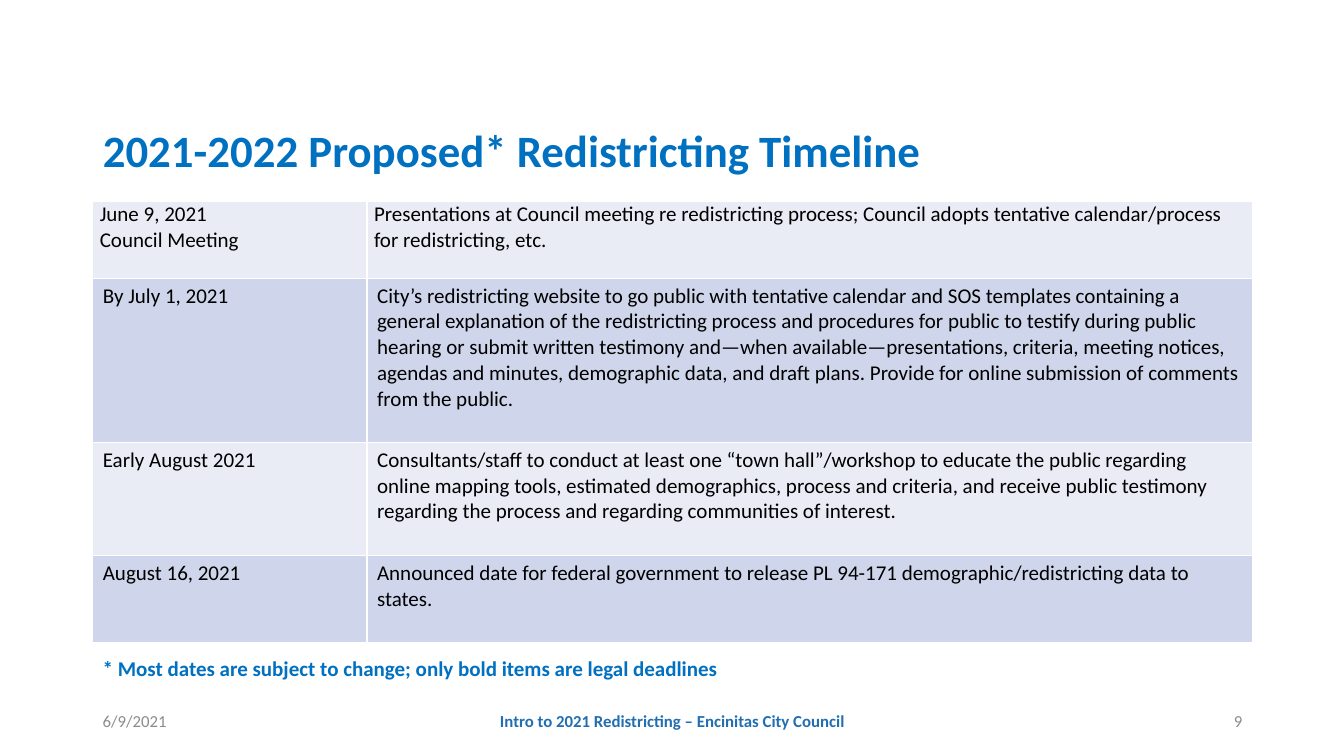
from lxml import etree
from pptx import Presentation
from pptx.dml.color import RGBColor
from pptx.enum.text import MSO_ANCHOR, PP_ALIGN
from pptx.oxml.ns import qn
from pptx.util import Inches, Pt

LEFT, CENTER, RIGHT = PP_ALIGN.LEFT, PP_ALIGN.CENTER, PP_ALIGN.RIGHT
TOP, MIDDLE = MSO_ANCHOR.TOP, MSO_ANCHOR.MIDDLE

BLUE = RGBColor(0x00, 0x70, 0xC0)
FOOTER_BLUE = RGBColor(0x21, 0x6E, 0xB0)
GRAY = RGBColor(0x8C, 0x8C, 0x8C)
BLACK = RGBColor(0x00, 0x00, 0x00)
BANDS = (RGBColor(0xE9, 0xEB, 0xF5), RGBColor(0xCF, 0xD5, 0xEA))
BORDER = "FFFFFF"

# Page grid, in inches
WIDTH, HEIGHT = 13.33, 7.5
MARGIN, CONTENT = 0.92, 11.5
DATE_COLUMN = 2.72
FOOTER_TOP, FOOTER_HEIGHT = 6.95, 0.4
SIDE_WIDTH, MIDDLE_WIDTH = 3, 4.5

TITLE_FORMAT = {"size": Pt(32), "bold": True, "color": BLUE}
CELL_FORMAT = {"size": Pt(15), "bold": False, "color": BLACK}
NOTE_FORMAT = {"size": Pt(15), "bold": True, "color": BLUE}
SIDE_FORMAT = {"size": Pt(12), "bold": False, "color": GRAY}
MIDDLE_FORMAT = {"size": Pt(12), "bold": True, "color": FOOTER_BLUE}

# Row height, date lines, description
TIMELINE = [
    (0.76, "June 9, 2021\nCouncil Meeting",
     "Presentations at Council meeting re redistricting process; Council adopts "
     "tentative calendar/process for redistricting, etc."),
    (1.63, "By July 1, 2021",
     "City’s redistricting website to go public with tentative calendar and SOS "
     "templates containing a general explanation of the redistricting process and "
     "procedures for public to testify during public hearing or submit written "
     "testimony and—when available—presentations, criteria, meeting notices, "
     "agendas and minutes, demographic data, and draft plans. Provide for online "
     "submission of comments from the public."),
    (1.12, "Early August 2021",
     "Consultants/staff to conduct at least one “town hall”/workshop to educate "
     "the public regarding online mapping tools, estimated demographics, process "
     "and criteria, and receive public testimony regarding the process and "
     "regarding communities of interest."),
    (0.87, "August 16, 2021",
     "Announced date for federal government to release PL 94-171 "
     "demographic/redistricting data to states."),
]


def write(text_frame, text, text_format, alignment=LEFT):
    text_frame.text = text
    for paragraph in text_frame.paragraphs:
        paragraph.alignment = alignment
        paragraph.font.name = "Calibri"
        for name, value in text_format.items():
            if name == "color":
                paragraph.font.color.rgb = value
            else:
                setattr(paragraph.font, name, value)


def add_title(slide, text):
    title = slide.shapes.title
    place = {"left": MARGIN, "top": 1.18, "width": CONTENT, "height": 0.67}
    for name, value in place.items():
        setattr(title, name, Inches(value))
    write(title.text_frame, text, TITLE_FORMAT)
    title.text_frame.vertical_anchor = MIDDLE
    title.text_frame.paragraphs[0].line_spacing = 0.9


def add_text(slide, box, text, text_format, alignment=LEFT, anchor=MIDDLE):
    shape = slide.shapes.add_textbox(*[Inches(value) for value in box])
    shape.text_frame.word_wrap = True
    shape.text_frame.vertical_anchor = anchor
    write(shape.text_frame, text, text_format, alignment)


def add_borders(cell):
    properties = cell._tc.get_or_add_tcPr()
    for index, side in enumerate(("a:lnL", "a:lnR", "a:lnT", "a:lnB")):
        line = etree.Element(qn(side), w=str(Pt(1)))
        fill = etree.SubElement(line, qn("a:solidFill"))
        etree.SubElement(fill, qn("a:srgbClr"), val=BORDER)
        properties.insert(index, line)


def add_timeline(slide, rows):
    total = sum(height for height, *_ in rows)
    frame = slide.shapes.add_table(len(rows), 2, Inches(MARGIN), Inches(2),
                                   Inches(CONTENT), Inches(total))
    table = frame.table
    table.first_row = table.horz_banding = False
    for column, width in zip(table.columns, (DATE_COLUMN, CONTENT - DATE_COLUMN)):
        column.width = Inches(width)
    for row_index, (height, *texts) in enumerate(rows):
        table.rows[row_index].height = Inches(height)
        for column_index, text in enumerate(texts):
            cell = table.cell(row_index, column_index)
            write(cell.text_frame, text, CELL_FORMAT)
            add_borders(cell)
            cell.fill.solid()
            cell.fill.fore_color.rgb = BANDS[row_index % 2]
            # The opening row has tighter margins
            if row_index == 0:
                cell.margin_left = cell.margin_right = Inches(0.07)
                cell.margin_top = cell.margin_bottom = 0


def add_footer(slide):
    parts = [
        (MARGIN, SIDE_WIDTH, "6/9/2021", SIDE_FORMAT, LEFT),
        (MARGIN + (CONTENT - MIDDLE_WIDTH) / 2, MIDDLE_WIDTH,
         "Intro to 2021 Redistricting – Encinitas City Council",
         MIDDLE_FORMAT, CENTER),
        (MARGIN + CONTENT - SIDE_WIDTH, SIDE_WIDTH, "9", SIDE_FORMAT, RIGHT),
    ]
    for left, width, text, text_format, alignment in parts:
        add_text(slide, (left, FOOTER_TOP, width, FOOTER_HEIGHT), text,
                 text_format, alignment)


def main():
    presentation = Presentation()
    presentation.slide_width = Inches(WIDTH)
    presentation.slide_height = Inches(HEIGHT)
    slide = presentation.slides.add_slide(presentation.slide_layouts[5])

    add_title(slide, "2021-2022 Proposed* Redistricting Timeline")
    add_timeline(slide, TIMELINE)
    add_text(slide, (MARGIN, 6.45, CONTENT, 0.35),
             "* Most dates are subject to change; only bold items are legal deadlines",
             NOTE_FORMAT, anchor=TOP)
    add_footer(slide)
    presentation.save("out.pptx")


if __name__ == "__main__":
    main()
